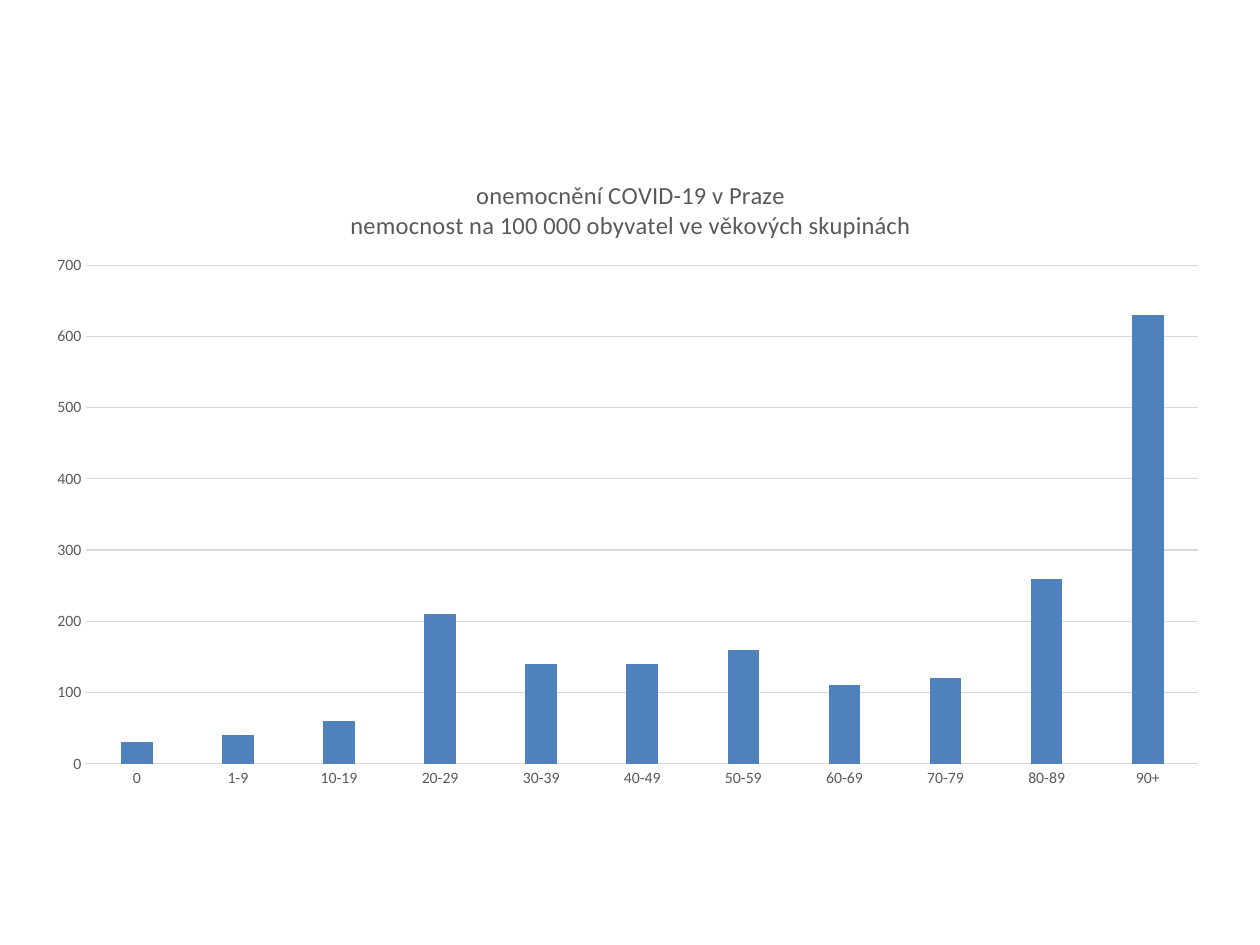
from pptx import Presentation
from pptx.chart.data import CategoryChartData as Data
from pptx.dml.color import RGBColor as Rgb
from pptx.enum.chart import XL_CHART_TYPE as Kind, XL_TICK_MARK as Tick
from pptx.oxml import parse_xml
from pptx.oxml.ns import nsdecls
from pptx.util import Pt

HUES = {"bar": "4F81BD", "text": "595959", "grid": "D9D9D9"}
TITLE = ["onemocnění COVID-19 v Praze", "nemocnost na 100 000 obyvatel ve věkových skupinách"]
AGES = ["0"] + ["1-9"] + [f"{n}-{n + 9}" for n in range(10, 90, 10)] + ["90+"]
RATES = [30, 40, 60, 210, 140, 140, 160, 110, 120, 260, 630]


class Deck:
    face = "Calibri"

    def __init__(self, wide, high):
        self.prs = Presentation()
        self.prs.slide_width, self.prs.slide_height = Pt(wide), Pt(high)
        self.slide = self.prs.slides.add_slide(self.prs.slide_layouts[6])

    def hue(self, name):
        return Rgb.from_string(HUES[name])

    def style(self, item, form):
        for key, val in form.items():
            setattr(item, key, val)

    def font(self, font, size):
        self.style(font, {"name": self.face, "size": Pt(size), "bold": False})
        font.color.rgb = self.hue("text")

    def line(self, line):
        line.color.rgb = self.hue("grid")
        line.width = Pt(0.75)

    def place(self, node, **spots):
        inner = '<c:layoutTarget val="inner"/>' if "w" in spots else ""
        modes = "".join(f'<c:{k}Mode val="edge"/>' for k in "xy")
        sides = "".join(f'<c:{k} val="{v}"/>' for k, v in spots.items())
        for old in node.xpath("./c:layout"):
            node.remove(old)
        layout = parse_xml(
            f'<c:layout {nsdecls("c")}><c:manualLayout>{inner}{modes}{sides}'
            "</c:manualLayout></c:layout>"
        )
        texts = node.xpath("./c:tx")
        if texts:
            texts[0].addnext(layout)
        else:
            node.insert(0, layout)

    def title(self, chart, lines):
        frame = chart.chart_title.text_frame
        for i, text in enumerate(lines):
            para = frame.add_paragraph() if i else frame.paragraphs[0]
            run = para.add_run()
            run.text = text
            self.font(run.font, 14)
        chart.chart_title.include_in_layout = False
        self.place(chart.chart_title._element, x=0.26, y=0.04)

    def axis(self, axis, form):
        self.style(axis, {"major_tick_mark": Tick.NONE, "minor_tick_mark": Tick.NONE, **form})
        self.font(axis.tick_labels.font, 9)

    def columns(self, box, cats, vals, lines):
        data = Data()
        data.categories = cats
        data.add_series("Series 1", vals)
        frame = self.slide.shapes.add_chart(Kind.COLUMN_CLUSTERED, *map(Pt, box), data)
        chart = frame.chart
        self.font(chart.font, 10)
        chart.has_legend = False
        self.title(chart, lines)
        self.axis(chart.category_axis, {"has_major_gridlines": False})
        self.line(chart.category_axis.format.line)
        scale = {"minimum_scale": 0, "maximum_scale": 700, "major_unit": 100}
        self.axis(chart.value_axis, {"has_major_gridlines": True, **scale})
        chart.value_axis.format.line.fill.background()
        self.line(chart.value_axis.major_gridlines.format.line)
        plot = chart.plots[0]
        self.style(plot, {"gap_width": 219, "overlap": -27, "vary_by_categories": False})
        fill = plot.series[0].format.fill
        fill.solid()
        fill.fore_color.rgb = self.hue("bar")
        area = chart._chartSpace.chart.plotArea
        self.place(area, x=0.04, y=0.18, w=0.94, h=0.77)


def main():
    deck = Deck(720, 540)
    deck.columns((22.3, 85, 676, 370), AGES, RATES, TITLE)
    deck.prs.save("out.pptx")


if __name__ == "__main__":
    main()
